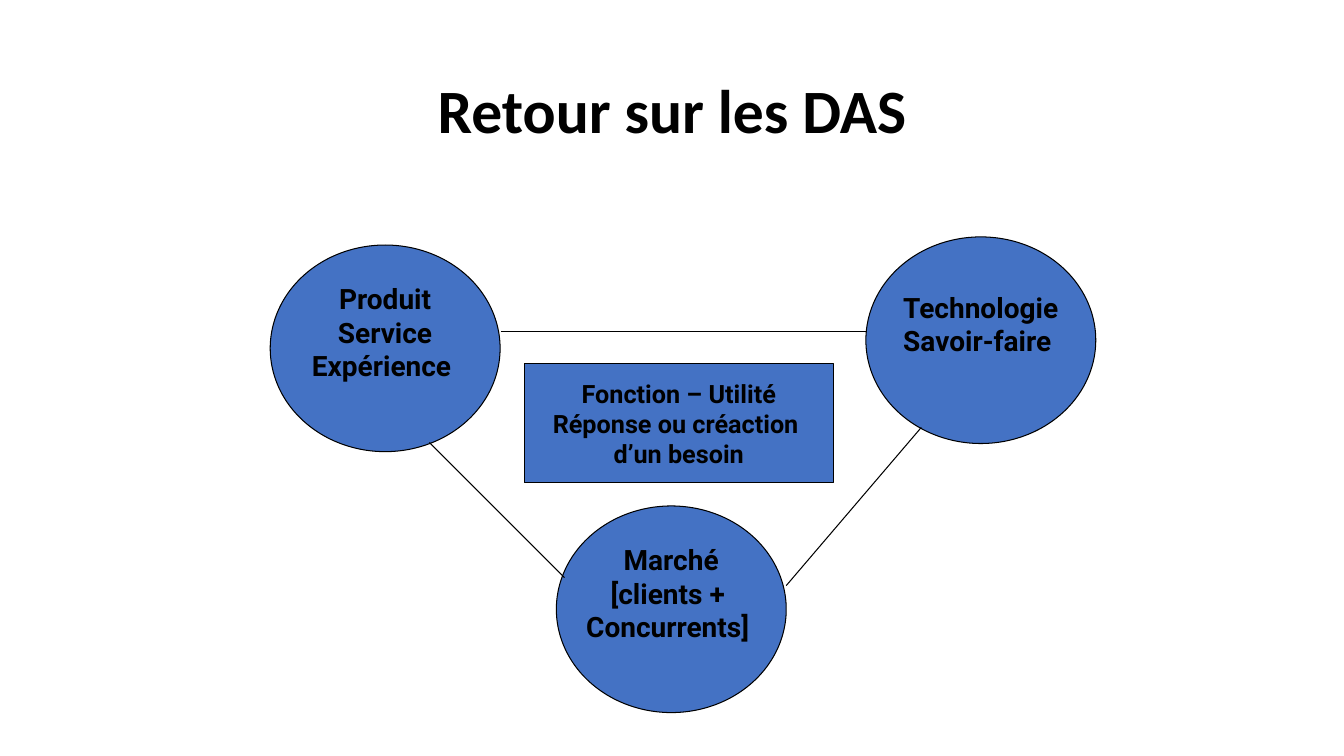
from dataclasses import dataclass

from lxml.etree import SubElement
from pptx import Presentation
from pptx.dml.color import RGBColor
from pptx.enum.shapes import MSO_CONNECTOR as Link, MSO_SHAPE as Form
from pptx.enum.text import MSO_ANCHOR as Anchor, PP_ALIGN as Align
from pptx.oxml.ns import qn
from pptx.util import Pt

TITLE = "Retour sur les DAS"
POLES = [
    (("Produit", "Service", "Expérience "), (193, 175)),
    (("Marché", "[clients + ", "Concurrents] "), (397.4, 361.4)),
    (("Technologie", "Savoir-faire "), (618.5, 169.2)),
]
NEED = ("Fonction – Utilité", "Réponse ou créaction ", "d’un besoin")
LINKS = [
    ((306.7, 316.1), (403.2, 412.6)),
    ((561.6, 418.3), (658.1, 305.3)),
    ((357.8, 236.9), (618.5, 236.9)),
]
TITLE_BOX = (66.2, 28.8, 828, 104.4)
NEED_BOX = (374.4, 259.9, 221, 85)
POLE_SIZE = (164.2, 147.6)
INSET = 3.6
POLE_LIFT = 23.4


@dataclass(frozen=True)
class Theme:
    fill: RGBColor = RGBColor(0x44, 0x72, 0xC4)
    ink: RGBColor = RGBColor(0, 0, 0)
    title_font: str = "Calibri"
    body_font: str = "Roboto"
    title_size: int = 44
    pole_size: int = 20
    need_size: int = 18
    stroke: float = 0.75


THEME = Theme()


def write(frame, lines, font, size):
    frame.vertical_anchor = Anchor.MIDDLE
    for index, line in enumerate(lines):
        paragraph = frame.paragraphs[0] if index == 0 else frame.add_paragraph()
        paragraph.alignment = Align.CENTER
        run = paragraph.add_run()
        run.text = line
        run.font.name = font
        run.font.size = Pt(size)
        run.font.bold = True
        run.font.color.rgb = THEME.ink


def outline(line):
    line.color.rgb = THEME.ink
    line.width = Pt(THEME.stroke)


def add_block(slide, form, box, lines, size, lift=0):
    block = slide.shapes.add_shape(form, *map(Pt, box))
    block.shadow.inherit = False
    block.fill.solid()
    block.fill.fore_color.rgb = THEME.fill
    outline(block.line)
    frame = block.text_frame
    frame.word_wrap = False
    frame.margin_bottom = Pt(INSET + lift)
    write(frame, lines, THEME.body_font, size)


def add_link(slide, start, end):
    link = slide.shapes.add_connector(Link.STRAIGHT, *map(Pt, start + end))
    outline(link.line)
    SubElement(link._element.spPr, qn("a:effectLst"))


def main():
    deck = Presentation()
    deck.slide_width, deck.slide_height = Pt(960), Pt(540)
    slide = deck.slides.add_slide(deck.slide_layouts[5])

    title = slide.shapes.title
    title.left, title.top, title.width, title.height = map(Pt, TITLE_BOX)
    write(title.text_frame, [TITLE], THEME.title_font, THEME.title_size)
    title.text_frame.paragraphs[0].line_spacing = 0.9

    for lines, corner in POLES:
        add_block(slide, Form.OVAL, corner + POLE_SIZE, lines, THEME.pole_size, POLE_LIFT)
    for start, end in LINKS:
        add_link(slide, start, end)
    add_block(slide, Form.RECTANGLE, NEED_BOX, NEED, THEME.need_size)

    deck.save("out.pptx")


if __name__ == "__main__":
    main()
